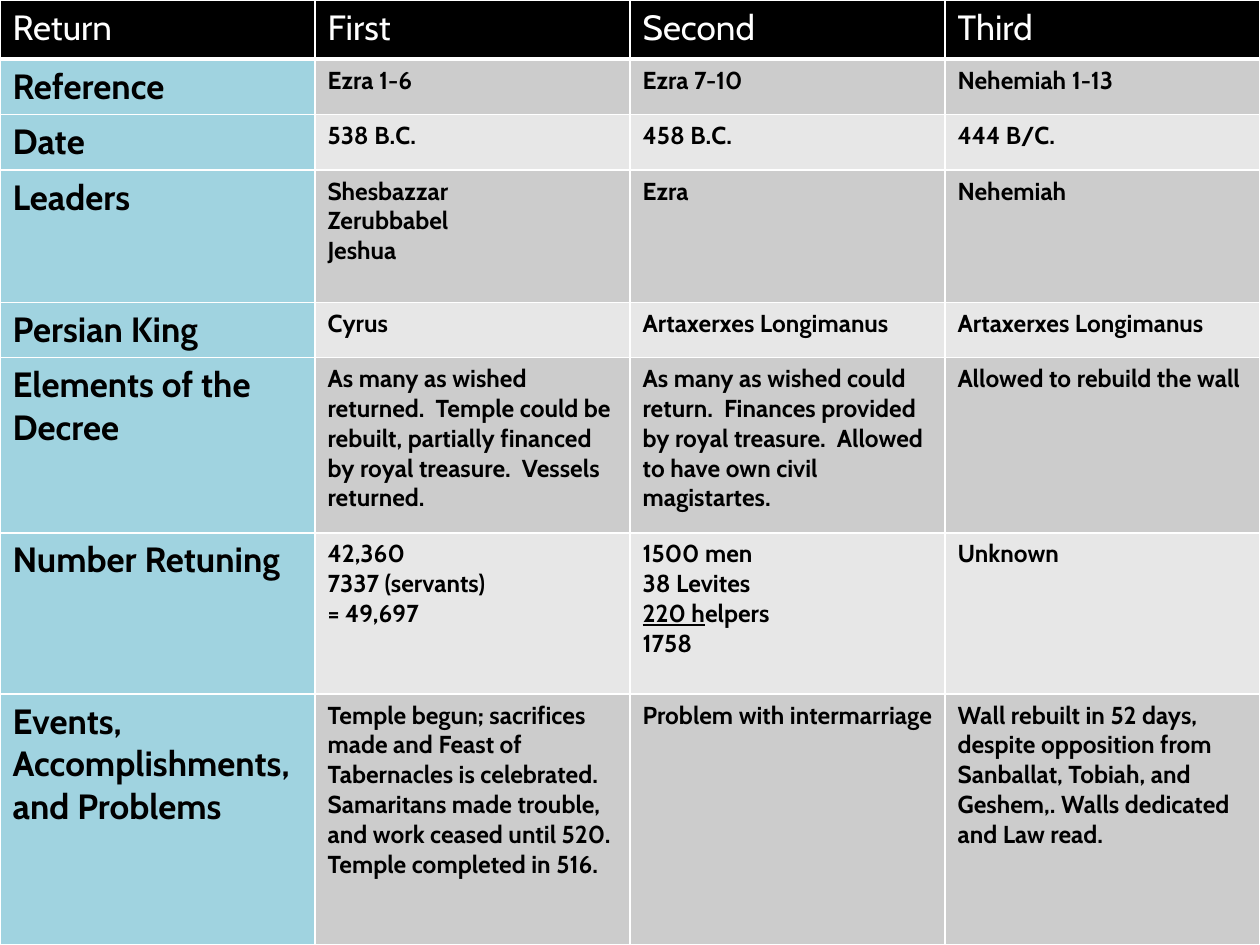
from lxml import etree
from pptx import Presentation
from pptx.dml.color import RGBColor
from pptx.oxml.ns import qn
from pptx.util import Inches, Pt

BLACK = RGBColor(0x00, 0x00, 0x00)
WHITE = RGBColor(0xFF, 0xFF, 0xFF)
BLUE = RGBColor(0xA0, 0xD3, 0xE0)
GREY = RGBColor(0xCC, 0xCC, 0xCC)
PALE = RGBColor(0xE7, 0xE7, 0xE7)

WIDE, HIGH = Inches(10), Inches(7.5)
SHARES = [0.47, 0.44, 0.44, 1.05, 0.44, 1.39, 1.28, 1.99]
MARK = "_"

ROWS = [
    ["Return", "First", "Second", "Third"],
    ["Reference", "Ezra 1-6", "Ezra 7-10", "Nehemiah 1-13"],
    ["Date", "538 B.C.", "458 B.C.", "444 B/C."],
    ["Leaders", "Shesbazzar\nZerubbabel\nJeshua", "Ezra", "Nehemiah"],
    ["Persian King", "Cyrus", "Artaxerxes Longimanus", "Artaxerxes Longimanus"],
    ["Elements of the Decree",
     "As many as wished returned.  Temple could be rebuilt, partially "
     "financed by royal treasure.  Vessels returned.",
     "As many as wished could return.  Finances provided by royal treasure.  "
     "Allowed to have own civil magistartes.",
     "Allowed to rebuild the wall"],
    ["Number Retuning", "42,360\n7337 (servants)\n= 49,697",
     "1500 men\n38 Levites\n_220 h_elpers\n1758", "Unknown"],
    ["Events, Accomplishments, and Problems",
     "Temple begun; sacrifices made and Feast of  Tabernacles is celebrated.  "
     "Samaritans made trouble, and work ceased until 520.  "
     "Temple completed in 516.",
     "Problem with intermarriage",
     "Wall rebuilt in 52 days, despite opposition from Sanballat, Tobiah, "
     "and Geshem,. Walls dedicated and Law read."],
]


class Board:
    font = "Cabin"
    large, small = Pt(20), Pt(14)
    thin, thick = Pt(1), Pt(3)

    def __init__(self, deck):
        self.slide = deck.slides.add_slide(deck.slide_layouts[6])

    def edge(self, cell, side, width):
        props = cell._tc.get_or_add_tcPr()
        line = etree.SubElement(props, qn(f"a:ln{side}"), w=str(width))
        fill = etree.SubElement(line, qn("a:solidFill"))
        etree.SubElement(fill, qn("a:srgbClr"), val=str(WHITE))

    def label(self, cell, text, size, color, bold):
        frame = cell.text_frame
        for i, line in enumerate(text.split("\n")):
            para = frame.add_paragraph() if i else frame.paragraphs[0]
            for j, part in enumerate(line.split(MARK)):
                if not part:
                    continue
                run = para.add_run()
                run.text = part
                font = run.font
                font.name, font.size, font.bold = self.font, size, bold
                font.color.rgb = color
                if j % 2:
                    font.underline = True

    def cell(self, cell, text, row, col):
        head = row == 0
        for side in "LRTB":
            width = self.thick if head and side == "B" else self.thin
            self.edge(cell, side, width)
        band = GREY if row % 2 else PALE
        cell.fill.solid()
        cell.fill.fore_color.rgb = BLACK if head else band if col else BLUE
        size = self.small if row and col else self.large
        self.label(cell, text, size, WHITE if head else BLACK, not head)

    def table(self, rows, shares):
        count = len(rows[0])
        grid = self.slide.shapes.add_table(
            len(rows), count, 0, 0, WIDE, HIGH).table
        for col in grid.columns:
            col.width = WIDE // count
        for r, (texts, share) in enumerate(zip(rows, shares)):
            grid.rows[r].height = int(HIGH * share / sum(shares))
            for c, text in enumerate(texts):
                self.cell(grid.cell(r, c), text, r, c)


def main():
    deck = Presentation()
    deck.slide_width, deck.slide_height = WIDE, HIGH
    Board(deck).table(ROWS, SHARES)
    deck.save("out.pptx")


if __name__ == "__main__":
    main()
